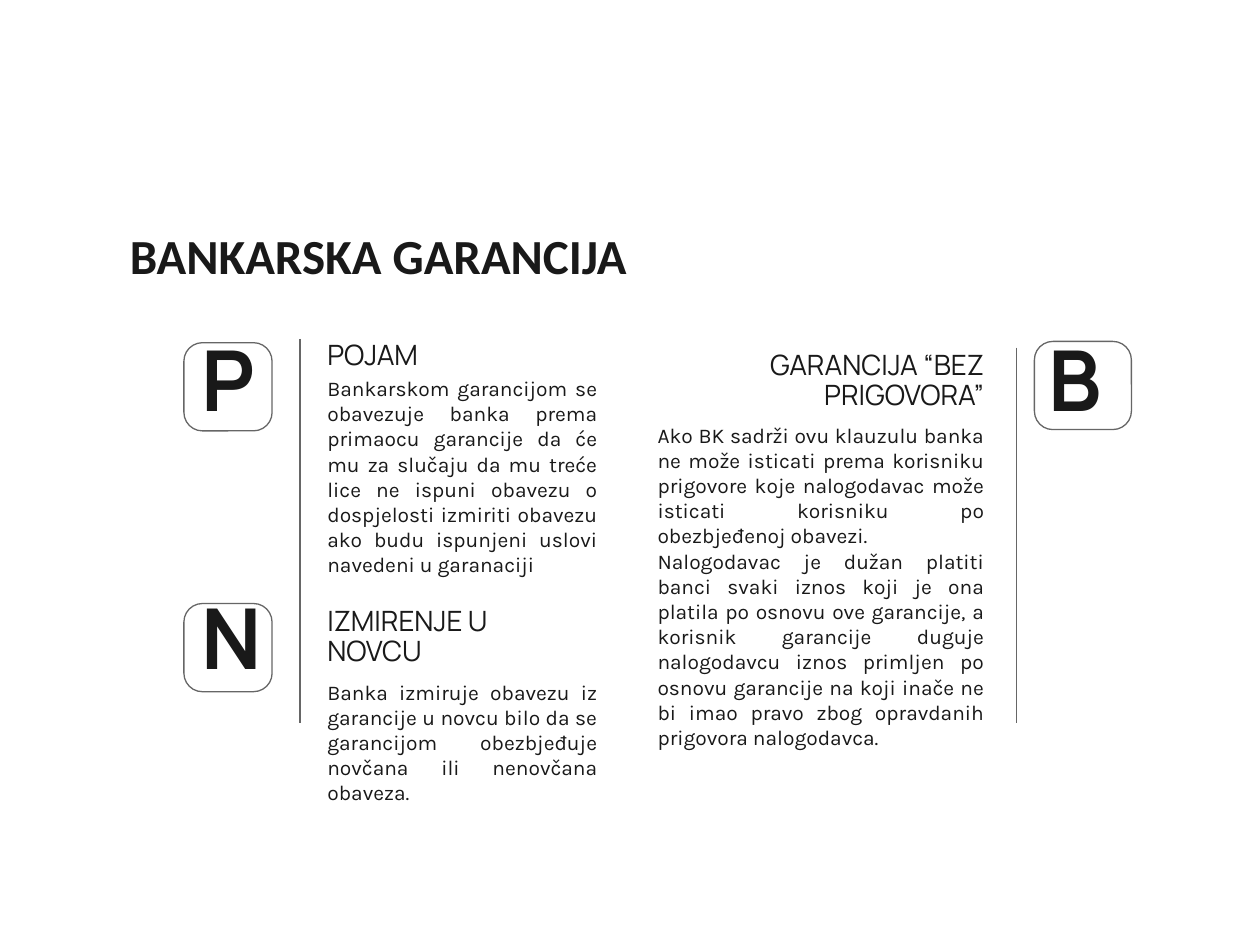
import pptx
import pptx.util
import pptx.dml.color
import pptx.enum.shapes
import pptx.enum.text
import lxml.etree
from pptx.oxml.ns import qn

Inches = pptx.util.Inches
ALIGN = pptx.enum.text.PP_ALIGN
ANCHOR = pptx.enum.text.MSO_ANCHOR

COLORS = {"ink": "191919", "rule": "666666"}

TITLE = ("BANKARSKA GARANCIJA", (0.93, 1.69, 5.48, 0.65))

# heading, its box and alignment; paragraphs and their box
SECTIONS = [
    ("POJAM", (2.5, 2.74, 2.17, 0.31), ALIGN.LEFT,
     ["Bankarskom garancijom se obavezuje banka prema primaocu garancije da će mu "
      "za slučaju da mu treće lice ne ispuni obavezu o dospjelosti izmiriti obavezu "
      "ako budu ispunjeni uslovi navedeni u garanaciji"],
     (2.5, 2.88, 2.34, 1.67)),
    ("GARANCIJA “BEZ PRIGOVORA”", (5.2, 3.07, 2.71, 0.3), ALIGN.RIGHT,
     ["Ako BK sadrži ovu klauzulu banka ne može isticati prema korisniku prigovore "
      "koje nalogodavac može isticati korisniku po obezbjeđenoj obavezi.",
      "Nalogodavac je dužan platiti banci svaki iznos koji je ona platila po osnovu "
      "ove garancije, a korisnik garancije duguje nalogodavcu iznos primljen po "
      "osnovu garancije na koji inače ne bi imao pravo zbog opravdanih prigovora "
      "nalogodavca."],
     (5.12, 3.25, 2.79, 2.24)),
    ("IZMIRENJE U NOVCU", (2.5, 5.1, 2.17, 0.3), ALIGN.LEFT,
     ["Banka izmiruje obavezu iz garancije u novcu bilo da se garancijom "
      "obezbjeđuje novčana ili nenovčana obaveza."],
     (2.5, 5.29, 2.34, 1.34)),
]

# letter, frame box, letter box
BADGES = [
    ("P", (1.46, 2.72, 0.7, 0.7), (1.5, 2.85, 0.58, 0.3)),
    ("N", (1.46, 4.79, 0.7, 0.7), (1.5, 4.67, 0.75, 0.75)),
    ("B", (8.21, 2.71, 0.77, 0.7), (8.22, 2.85, 0.54, 0.3)),
]

# x, top, bottom
DIVIDERS = [(2.38, 2.69, 5.74), (8.07, 2.76, 5.74)]


def rgb(name):
    return pptx.dml.color.RGBColor.from_string(COLORS[name])


def write(shape, paragraphs, font, size, align=ALIGN.LEFT, anchor=ANCHOR.TOP,
          bold=False, spacing=1.0):
    frame = shape.text_frame
    frame.word_wrap = True
    frame.auto_size = pptx.enum.text.MSO_AUTO_SIZE.NONE
    frame.vertical_anchor = anchor
    frame.margin_left = frame.margin_right = Inches(0.1)
    frame.margin_top = frame.margin_bottom = Inches(0.1)
    for index, text in enumerate(paragraphs):
        paragraph = frame.add_paragraph() if index else frame.paragraphs[0]
        paragraph.alignment = align
        paragraph.line_spacing = spacing
        run = paragraph.add_run()
        run.text = text
        run.font.name = font
        run.font.size = pptx.util.Pt(size)
        run.font.bold = bold
        run.font.color.rgb = rgb("ink")


def add_text(slide, box, *args, **kwargs):
    write(slide.shapes.add_textbox(*map(Inches, box)), *args, **kwargs)


def style_line(line):
    line.color.rgb = rgb("rule")
    line.width = pptx.util.Pt(0.75)


def add_badge(slide, letter, frame_box, letter_box):
    frame = slide.shapes.add_shape(
        pptx.enum.shapes.MSO_SHAPE.ROUNDED_RECTANGLE, *map(Inches, frame_box))
    frame.adjustments[0] = 0.21
    frame.fill.background()
    frame.shadow.inherit = False
    style_line(frame.line)
    add_text(slide, letter_box, [letter], "Manrope", 48,
             anchor=ANCHOR.MIDDLE, bold=True)


def add_divider(slide, x, top, bottom):
    divider = slide.shapes.add_connector(
        pptx.enum.shapes.MSO_CONNECTOR.STRAIGHT,
        Inches(x), Inches(top), Inches(x), Inches(bottom))
    style_line(divider.line)
    lxml.etree.SubElement(divider._element.spPr, qn("a:effectLst"))


def main():
    deck = pptx.Presentation()
    deck.slide_width, deck.slide_height = Inches(10), Inches(7.5)
    slide = deck.slides.add_slide(deck.slide_layouts.get_by_name("Title Only"))

    title_text, title_box = TITLE
    title = slide.shapes.title
    title.left, title.top, title.width, title.height = map(Inches, title_box)
    write(title, [title_text], "Calibri", 28, bold=True)

    for heading, heading_box, align, paragraphs, body_box in SECTIONS:
        add_text(slide, body_box, paragraphs, "Karla", 12, align=ALIGN.JUSTIFY)
        add_text(slide, heading_box, [heading], "Manrope", 16, align=align,
                 anchor=ANCHOR.BOTTOM, spacing=0.9)
    for badge in BADGES:
        add_badge(slide, *badge)
    for divider in DIVIDERS:
        add_divider(slide, *divider)

    deck.save("out.pptx")


if __name__ == "__main__":
    main()
